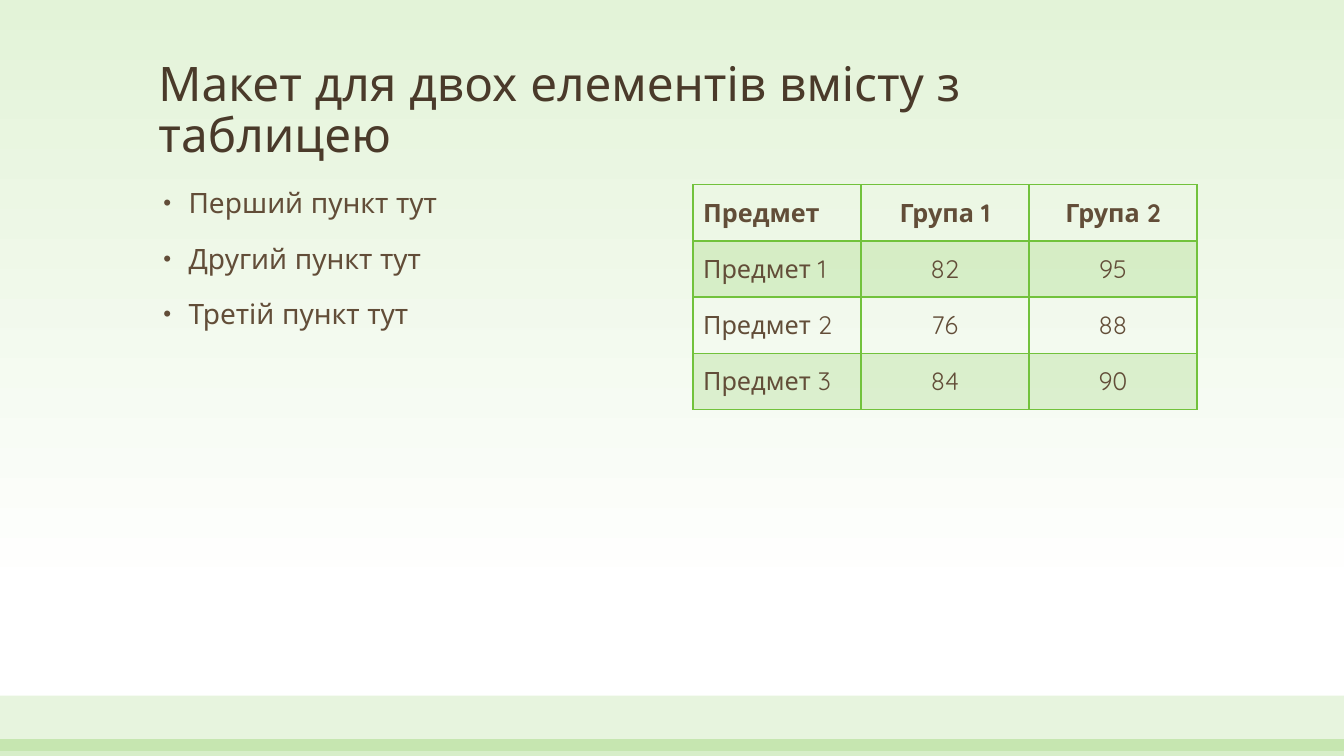
import dataclasses

import pptx
import pptx.dml.color
import pptx.enum.shapes
import pptx.enum.text
import pptx.oxml
import pptx.oxml.ns
import pptx.util

Pt = pptx.util.Pt
ALIGN = pptx.enum.text.PP_ALIGN
ANCHOR = pptx.enum.text.MSO_ANCHOR


@dataclasses.dataclass(frozen=True)
class Theme:
    """Colours, font and type sizes of the slide."""

    font: str = "Quicksand"
    title_color: str = "4A3A2A"
    text_color: str = "624D38"
    accent: str = "72C23C"
    sky: str = "E3F3D8"
    white: str = "FFFFFF"
    title_size: int = 34
    body_size: int = 20
    table_size: int = 18


THEME = Theme()
BULLETS = ["Перший пункт тут", "Другий пункт тут", "Третій пункт тут"]
ROWS = [
    ["Предмет", "Група 1", "Група 2"],
    ["Предмет 1", "82", "95"],
    ["Предмет 2", "76", "88"],
    ["Предмет 3", "84", "90"],
]


def rgb(color):
    """Turn a hex string into a colour."""
    return pptx.dml.color.RGBColor.from_string(color)


def parse_drawing(tag, attributes="", content=""):
    """Build one DrawingML element."""
    namespace = pptx.oxml.ns.nsdecls("a")
    return pptx.oxml.parse_xml(f"<a:{tag} {namespace} {attributes}>{content}</a:{tag}>")


def write_text(paragraph, text, size, color=THEME.text_color, bold=False,
               align=ALIGN.LEFT, line_spacing=None, space_before=None):
    """Write a formatted run into a paragraph."""
    paragraph.alignment = align
    if line_spacing is not None:
        paragraph.line_spacing = line_spacing
    if space_before is not None:
        paragraph.space_before = Pt(space_before)
    run = paragraph.add_run()
    run.text = text
    run.font.name = THEME.font
    run.font.size = Pt(size)
    run.font.bold = bold
    run.font.color.rgb = rgb(color)


def fill_accent(fill, opacity):
    """Fill with the accent colour at an opacity in percent."""
    fill.solid()
    fill.fore_color.rgb = rgb(THEME.accent)
    color = fill._xPr.find(".//" + pptx.oxml.ns.qn("a:srgbClr"))
    color.append(parse_drawing("alpha", f'val="{opacity * 1000}"'))


def paint_background(slide):
    """Fade the background from pale green to white."""
    fill = slide.background.fill
    fill.gradient()
    fill.gradient_angle = 270
    for stop, color, position in zip(fill.gradient_stops, (THEME.sky, THEME.white), (0, 0.79)):
        stop.color.rgb = rgb(color)
        stop.position = position


def add_footer_bands(slide, left, top, width, height):
    """Place two overlapping translucent bands at the foot of the box."""
    for offset, band_height, opacity in ((0, 39.6, 17), (height - 12, 12, 28)):
        band = slide.shapes.add_shape(pptx.enum.shapes.MSO_SHAPE.RECTANGLE, Pt(left),
                                      Pt(top + offset), Pt(width), Pt(band_height))
        band.shadow.inherit = False
        band.line.fill.background()
        fill_accent(band.fill, opacity)


def place_title(slide, text, left, top, width, height):
    """Move and format the title placeholder."""
    title = slide.shapes.title
    title.left, title.top, title.width, title.height = map(Pt, (left, top, width, height))
    frame = title.text_frame
    frame.word_wrap = True
    frame.auto_size = pptx.enum.text.MSO_AUTO_SIZE.NONE
    frame.vertical_anchor = ANCHOR.BOTTOM
    write_text(frame.paragraphs[0], text, THEME.title_size, color=THEME.title_color,
               line_spacing=0.9)


def add_bullets(slide, items, left, top, width, height):
    """Add the bulleted list."""
    frame = slide.shapes.add_textbox(Pt(left), Pt(top), Pt(width), Pt(height)).text_frame
    frame.word_wrap = True
    for index, item in enumerate(items):
        paragraph = frame.add_paragraph() if index else frame.paragraphs[0]
        write_text(paragraph, item, THEME.body_size, line_spacing=0.9, space_before=18)
        properties = paragraph._p.get_or_add_pPr()
        properties.set("marL", str(Pt(21.6)))
        properties.set("indent", str(Pt(-18)))
        properties.append(parse_drawing("buSzPct", 'val="80000"'))
        properties.append(parse_drawing("buFont", 'typeface="Arial"'))
        properties.append(parse_drawing("buChar", 'char="•"'))


def set_borders(cell, top, bottom):
    """Draw all four borders of a cell, sides one point wide."""
    content = f'<a:solidFill><a:srgbClr val="{THEME.accent}"/></a:solidFill>'
    properties = cell._tc.get_or_add_tcPr()
    borders = (("lnL", 1), ("lnR", 1), ("lnT", top), ("lnB", bottom))
    for index, (tag, width) in enumerate(borders):
        properties.insert(index, parse_drawing(tag, f'w="{Pt(width)}"', content))


def add_score_table(slide, rows, left, top, width, height):
    """Add the table with a bold header and shaded odd rows."""
    table = slide.shapes.add_table(len(rows), len(rows[0]), Pt(left), Pt(top),
                                   Pt(width), Pt(height)).table
    table.first_row = False
    table.horz_banding = False
    for row_index, row in enumerate(rows):
        for column_index, text in enumerate(row):
            cell = table.cell(row_index, column_index)
            cell.vertical_anchor = ANCHOR.MIDDLE
            write_text(cell.text_frame.paragraphs[0], text, THEME.table_size,
                       bold=row_index == 0,
                       align=ALIGN.CENTER if column_index else ALIGN.LEFT)
            if row_index % 2:
                fill_accent(cell.fill, 20)
            else:
                cell.fill.background()
            set_borders(cell, top=2 if row_index == 1 else 1,
                        bottom=2 if row_index == 0 else 1)


def main():
    """Build and save the slide."""
    presentation = pptx.Presentation()
    presentation.slide_width, presentation.slide_height = Pt(960), Pt(540)
    slide = presentation.slides.add_slide(presentation.slide_layouts[5])
    paint_background(slide)
    add_footer_bands(slide, 0, 496.8, 960, 43.2)
    place_title(slide, "Макет для двох елементів вмісту з таблицею", 106, 34.5, 749, 85.5)
    add_score_table(slide, ROWS, 495, 132, 360, 160.4)
    add_bullets(slide, BULLETS, 106, 132, 360, 342)
    presentation.save("out.pptx")


if __name__ == "__main__":
    main()
